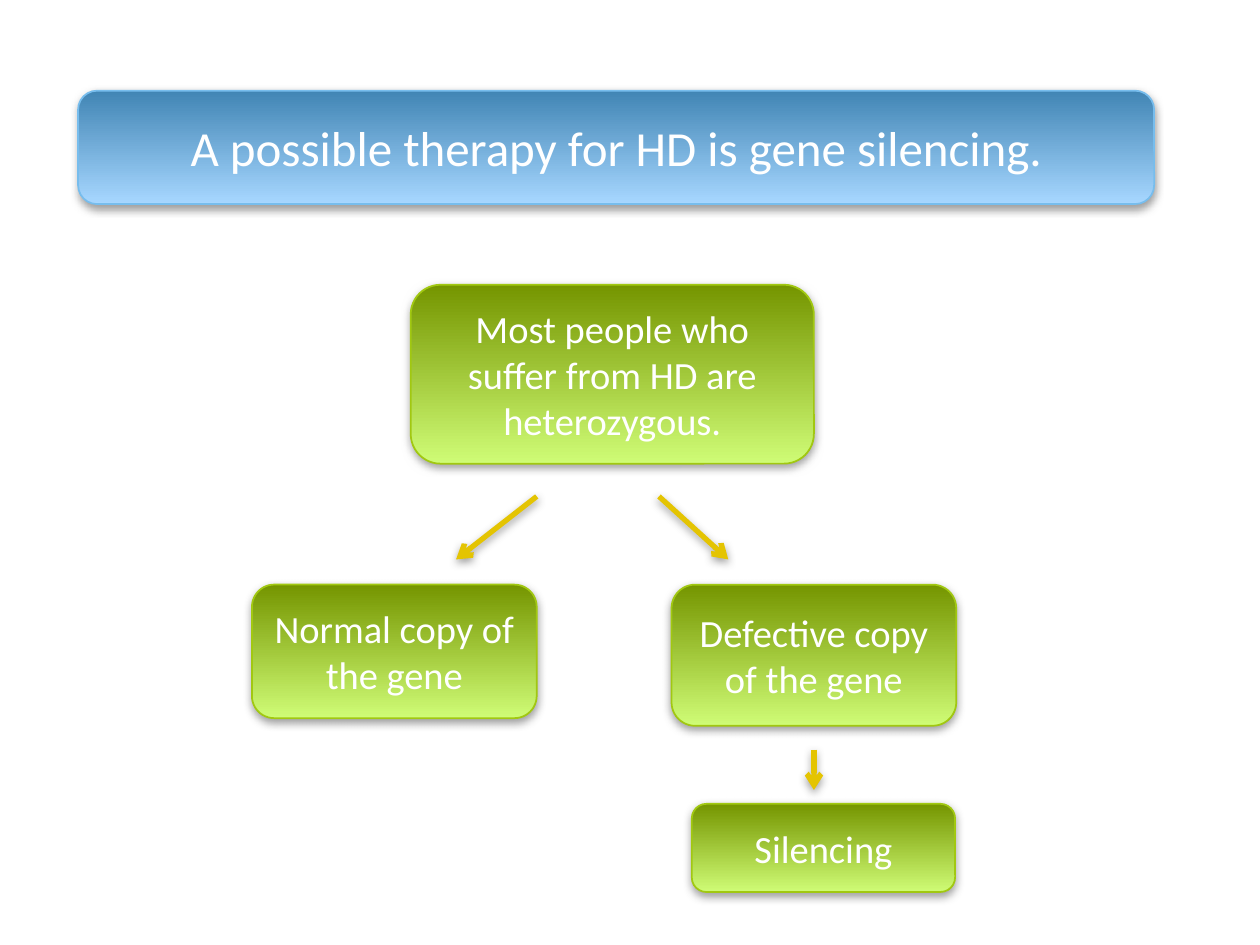
import pptx
import pptx.util
import pptx.dml.color
import pptx.enum.shapes
import pptx.enum.text
import pptx.oxml.ns
import lxml.etree

Inches = pptx.util.Inches
Pt = pptx.util.Pt
RGBColor = pptx.dml.color.RGBColor
qn = pptx.oxml.ns.qn

WHITE = RGBColor(0xFF, 0xFF, 0xFF)
GOLD = RGBColor(0xE4, 0xC4, 0x02)
SHADOW = RGBColor(0x80, 0x80, 0x80)
# gradient top, gradient bottom, outline
BLUE = (RGBColor(0x41, 0x85, 0xB4), RGBColor(0xA7, 0xD7, 0xFF), RGBColor(0x77, 0xBD, 0xED))
GREEN = (RGBColor(0x75, 0x95, 0x00), RGBColor(0xCF, 0xFC, 0x76), RGBColor(0xA1, 0xC8, 0x11))


def add_shadow(effects):
    """Put a soft grey shadow, falling straight down, into an a:effectLst."""
    shadow = lxml.etree.SubElement(
        effects, qn("a:outerShdw"), blurRad=str(Pt(5)), dist=str(Pt(2)),
        dir="5400000", rotWithShape="0")
    color = lxml.etree.SubElement(shadow, qn("a:srgbClr"), val=str(SHADOW))
    lxml.etree.SubElement(color, qn("a:alpha"), val="75000")


prs = pptx.Presentation()
prs.slide_width, prs.slide_height = Inches(10), Inches(7.5)
s = prs.slides.add_slide(prs.slide_layouts[6])

boxes = [
    ("A possible therapy for HD is gene silencing.", 0.62, 0.72, 8.54, 0.9, BLUE, 28),
    ("Normal copy of the gene", 2, 4.64, 2.26, 1.06, GREEN, 22),
    ("Defective copy of the gene", 5.33, 4.64, 2.26, 1.12, GREEN, 22),
    ("Most people who suffer from HD are heterozygous.", 3.26, 2.26, 3.2, 1.42, GREEN, 22),
    ("Silencing", 5.49, 6.38, 2.09, 0.7, GREEN, 22),
]
for text, left, top, width, height, (dark, light, outline), size in boxes:
    sp = s.shapes.add_shape(
        pptx.enum.shapes.MSO_SHAPE.ROUNDED_RECTANGLE,
        Inches(left), Inches(top), Inches(width), Inches(height))
    sp.fill.gradient()
    sp.fill.gradient_angle = 270
    for stop, color in zip(sp.fill.gradient_stops, (dark, light)):
        stop.color.rgb = color
    sp.line.color.rgb = outline
    sp.line.width = Pt(1)
    sp.shadow.inherit = False
    add_shadow(sp.element.spPr.find(qn("a:effectLst")))

    tf = sp.text_frame
    tf.word_wrap = True
    tf.vertical_anchor = pptx.enum.text.MSO_ANCHOR.MIDDLE
    tf.text = text
    p = tf.paragraphs[0]
    p.alignment = pptx.enum.text.PP_ALIGN.CENTER
    r = p.runs[0]
    r.font.name = "Calibri"
    r.font.size = Pt(size)
    r.font.color.rgb = WHITE

arrows = [
    (4.26, 3.94, 3.62, 4.44),
    (5.23, 3.94, 5.78, 4.44),
    (6.46, 5.95, 6.46, 6.27),
]
for ends in arrows:
    arrow = s.shapes.add_connector(
        pptx.enum.shapes.MSO_CONNECTOR.STRAIGHT, *[Inches(v) for v in ends])
    arrow.line.color.rgb = GOLD
    arrow.line.width = Pt(3)
    lxml.etree.SubElement(arrow.line._get_or_add_ln(), qn("a:tailEnd"), type="arrow")
    add_shadow(lxml.etree.SubElement(arrow._element.spPr, qn("a:effectLst")))

prs.save("out.pptx")
